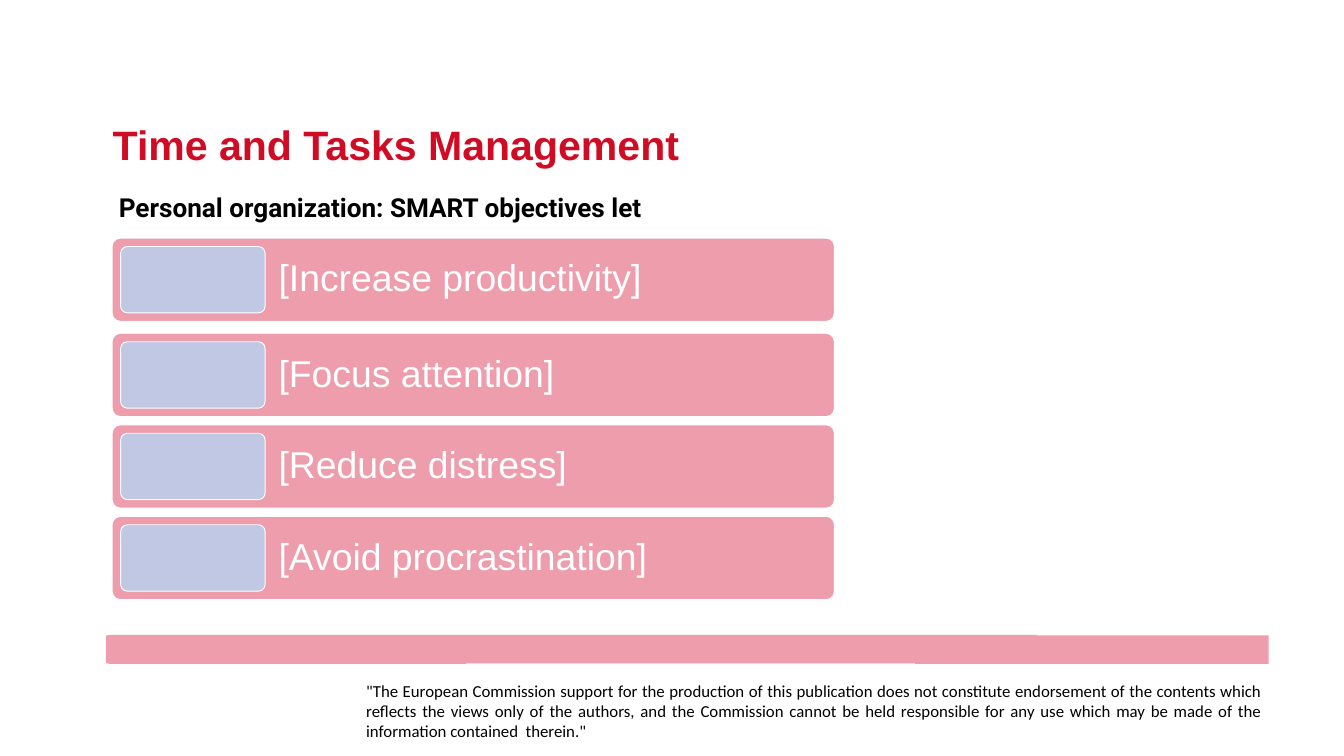
from dataclasses import dataclass

from pptx import Presentation
from pptx.dml.color import RGBColor
from pptx.enum.shapes import MSO_SHAPE
from pptx.enum.text import MSO_ANCHOR, MSO_AUTO_SIZE, PP_ALIGN
from pptx.util import Cm, Pt

ROUNDED = MSO_SHAPE.ROUNDED_RECTANGLE
MIDDLE = MSO_ANCHOR.MIDDLE
TOP = MSO_ANCHOR.TOP
FIT_SHAPE = MSO_AUTO_SIZE.SHAPE_TO_FIT_TEXT
LEFT = PP_ALIGN.LEFT
JUSTIFY = PP_ALIGN.JUSTIFY


@dataclass(frozen=True)
class Theme:
    red: RGBColor = RGBColor(0xD0, 0x0B, 0x24)
    pink: RGBColor = RGBColor(0xED, 0x9D, 0xAB)
    blue: RGBColor = RGBColor(0xC0, 0xC8, 0xE3)
    white: RGBColor = RGBColor(0xFF, 0xFF, 0xFF)
    black: RGBColor = RGBColor(0x00, 0x00, 0x00)
    heading_font: str = "Arial"
    subtitle_font: str = "Roboto"
    note_font: str = "Calibri"
    title_size: int = 44
    row_size: int = 40
    subtitle_size: int = 28
    note_size: int = 18


@dataclass(frozen=True)
class Box:
    """A region of the slide, in centimetres."""
    left: float
    top: float
    width: float
    height: float

    def lengths(self):
        return Cm(self.left), Cm(self.top), Cm(self.width), Cm(self.height)


THEME = Theme()
OBJECTIVES = ["[Increase productivity]", "[Focus attention]",
              "[Reduce distress]", "[Avoid procrastination]"]
DISCLAIMER = (
    '"The European Commission support for the production of this publication '
    "does not constitute endorsement of the contents which reflects the views "
    "only of the authors, and the Commission cannot be held responsible for "
    'any use which may be made of the information contained  therein."'
)


def write_text(shape, text, font_name, size, color, margins, bold=False,
               align=LEFT, anchor=TOP, line_spacing=1.0):
    frame = shape.text_frame
    frame.word_wrap = True
    frame.vertical_anchor = anchor
    (frame.margin_left, frame.margin_top,
     frame.margin_right, frame.margin_bottom) = [Cm(m) for m in margins]
    paragraph = frame.paragraphs[0]
    paragraph.alignment = align
    paragraph.line_spacing = line_spacing
    run = paragraph.add_run()
    run.text = text
    run.font.name = font_name
    run.font.size = Pt(size)
    run.font.bold = bold
    run.font.color.rgb = color


def add_heading(slide, box, text, font_name, size, color):
    shape = slide.shapes.add_textbox(*box.lengths())
    write_text(shape, text, font_name, size, color,
               (0.25, 0.13, 0.25, 0.13), bold=True)


def add_panel(slide, box, fill):
    shape = slide.shapes.add_shape(ROUNDED, *box.lengths())
    shape.adjustments[0] = 0.1
    shape.shadow.inherit = False
    shape.fill.solid()
    shape.fill.fore_color.rgb = fill
    shape.line.color.rgb = THEME.white
    shape.line.width = Pt(1)
    return shape


def add_objective(slide, box, text):
    row = add_panel(slide, box, THEME.pink)
    write_text(row, text, THEME.heading_font, THEME.row_size, THEME.white,
               (6.2, 0.43, 0.43, 0.43), anchor=MIDDLE, line_spacing=0.9)
    # Blue tile inset in the row
    inset = 0.32
    add_panel(slide, Box(box.left + inset, box.top + inset, box.width / 5,
                         box.height - 2 * inset), THEME.blue)


def add_objectives(slide, box, row_height, pitch, first_gap):
    """Stack the rows evenly, with a little extra space after the first."""
    for index, text in enumerate(OBJECTIVES):
        top = box.top + index * pitch + (first_gap if index else 0)
        add_objective(slide, Box(box.left, top, box.width, row_height), text)


def add_band(slide, box):
    """Draw the band, whose edges step slightly."""
    step = 0.02
    right, bottom = box.width, box.height
    outline = [(right, step), (35.18, step), (35.18, 0), (0.1, 0),
               (0.1, step), (0, step), (0, bottom - step),
               (0.1, bottom - step), (0.1, bottom), (13.61, bottom),
               (13.61, bottom - step), (30.58, bottom - step),
               (30.58, bottom), (right, bottom)]
    points = [(Cm(box.left + x), Cm(box.top + y)) for x, y in outline]
    builder = slide.shapes.build_freeform(*points[0])
    builder.add_line_segments(points[1:], close=True)
    band = builder.convert_to_shape()
    band.shadow.inherit = False
    band.fill.solid()
    band.fill.fore_color.rgb = THEME.pink
    band.line.fill.background()


def add_disclaimer(slide, box):
    shape = slide.shapes.add_textbox(*box.lengths())
    write_text(shape, DISCLAIMER, THEME.note_font, THEME.note_size,
               THEME.black, (0, 0, 0, 0), align=JUSTIFY, line_spacing=0.98)
    shape.text_frame.auto_size = FIT_SHAPE


def main():
    presentation = Presentation()
    presentation.slide_width = Cm(50.8)
    presentation.slide_height = Cm(28.58)
    slide = presentation.slides.add_slide(presentation.slide_layouts[6])

    # Footer
    add_band(slide, Box(4.01, 24, 43.94, 1.1))
    add_disclaimer(slide, Box(13.84, 25.78, 33.86, 1.93))

    # Headings
    add_heading(slide, Box(4.01, 4.37, 24.49, 2.11),
                "Time and Tasks Management", THEME.heading_font,
                THEME.title_size, THEME.red)
    add_heading(slide, Box(4.24, 7.11, 36.63, 1.42),
                "Personal organization: SMART objectives let",
                THEME.subtitle_font, THEME.subtitle_size, THEME.black)

    # Objectives
    add_objectives(slide, Box(4.24, 9, 27.3, 13.66),
                   row_height=3.15, pitch=3.46, first_gap=0.14)

    presentation.save("out.pptx")


if __name__ == "__main__":
    main()
